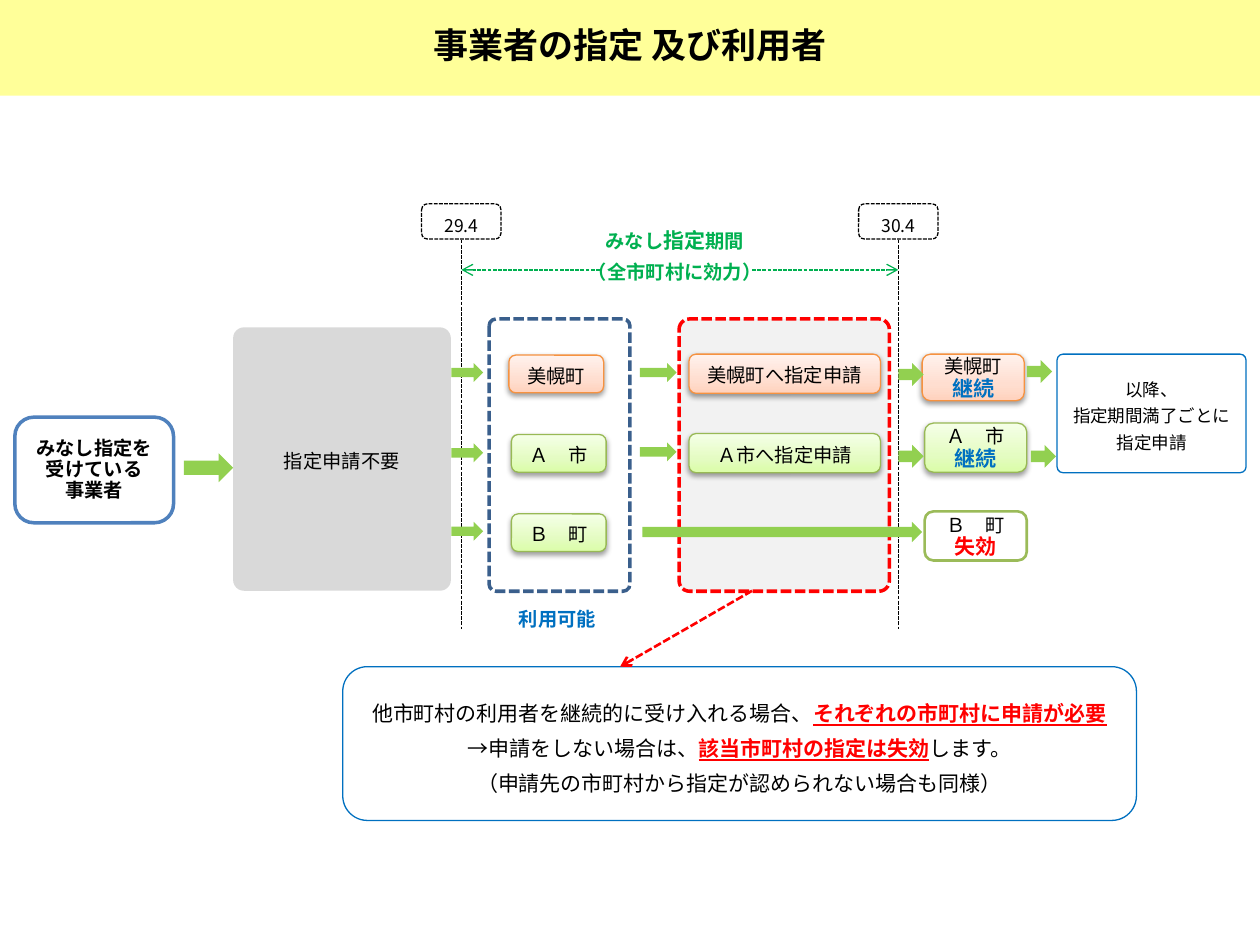
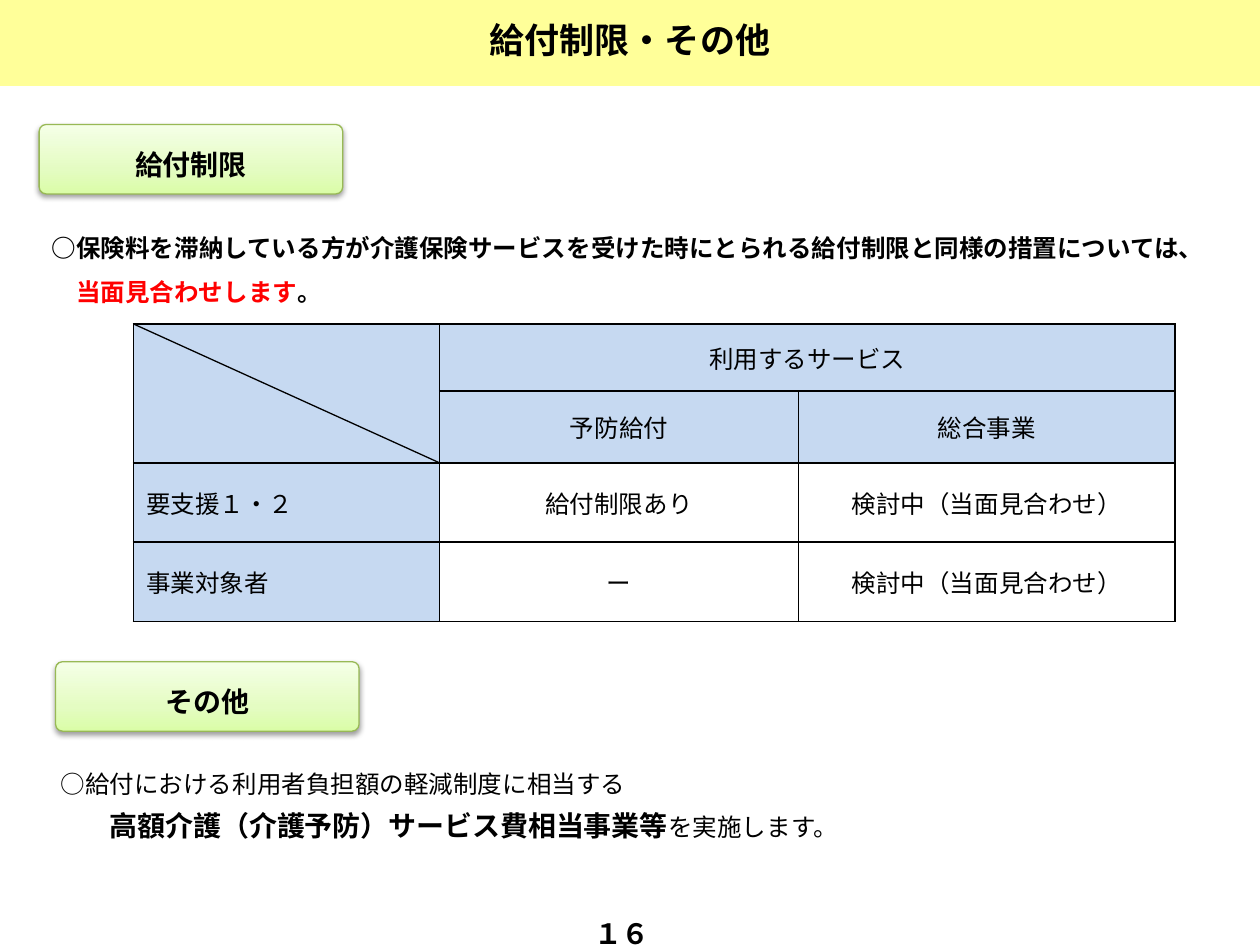
"""Build two slides on provider designation and on benefit restrictions."""
from dataclasses import dataclass
from itertools import accumulate

from lxml.etree import SubElement
from pptx import Presentation
from pptx.dml.color import RGBColor
from pptx.enum.dml import MSO_LINE
from pptx.enum.shapes import MSO_CONNECTOR, MSO_SHAPE
from pptx.enum.text import MSO_ANCHOR, MSO_AUTO_SIZE, PP_ALIGN
from pptx.oxml import parse_xml
from pptx.oxml.ns import nsdecls, qn
from pptx.util import Cm, Pt


@dataclass(frozen=True)
class Theme:
    font: str = "Noto Sans CJK JP"
    number_font: str = "Calibri"
    black: str = "000000"
    white: str = "FFFFFF"
    band: str = "FFFF99"
    red: str = "FF0000"
    blue: str = "0070C0"
    navy: str = "3A5F8C"
    provider: str = "4F81BD"
    green: str = "00B050"
    arrow: str = "92D050"
    olive: str = "9BBB59"
    pale_grey: str = "F2F2F2"
    grey: str = "D9D9D9"
    header: str = "C6D9F1"
    peach_line: str = "F69240"
    lime_line: str = "98B955"
    peach: tuple = ("FFD2BD", "FFDED0", "FFF2ED")
    lime: tuple = ("DAFDA7", "E4FCC2", "F5FFE7")
    title: int = 20
    heading: int = 16
    body: int = 14
    note: int = 12
    label: int = 11
    small: int = 10


theme = Theme()


def write(frame, paragraphs, spacing=None, align=PP_ALIGN.CENTER, **base):
    """Fill a frame; a paragraph is a string or a list of (text, changes)."""
    frame.word_wrap = True
    frame.vertical_anchor = MSO_ANCHOR.MIDDLE
    for index, spans in enumerate(paragraphs):
        paragraph = frame.add_paragraph() if index else frame.paragraphs[0]
        layout = {
            "alignment": align,
            "line_spacing": Pt(spacing) if spacing else None,
            "space_before": Pt(0),
        }
        for name, value in layout.items():
            setattr(paragraph, name, value)
        for text, changes in [(spans, {})] if isinstance(spans, str) else spans:
            span = paragraph.add_run()
            span.text = text
            look = {"name": theme.font, "size": theme.label, "bold": False,
                    "color": theme.black, **base, **changes}
            color = look.pop("color")
            look["size"] = Pt(look["size"])
            for name, value in look.items():
                setattr(span.font, name, value)
            span.font.color.rgb = RGBColor.from_string(color)
            SubElement(span.font._element, qn("a:ea"), typeface=look["name"])


def add_box(page, place, fill=None, line=None, width=0.75, dash=False,
            corner=0.0, kind=None):
    """Add a shape; a fill of several colours makes a shadowed gradient."""
    kind = kind or (MSO_SHAPE.ROUNDED_RECTANGLE if corner else MSO_SHAPE.RECTANGLE)
    box = page.shapes.add_shape(kind, *map(Cm, place))
    box.shadow.inherit = False
    properties = box._element.spPr
    if corner:
        box.adjustments[0] = corner
    if isinstance(fill, tuple):
        stops = "".join(
            f'<a:gs pos="{position}"><a:srgbClr val="{color}"/></a:gs>'
            for position, color in zip((0, 35000, 100000), fill))
        properties.insert(2, parse_xml(
            f'<a:gradFill {nsdecls("a")} rotWithShape="1"><a:gsLst>{stops}</a:gsLst>'
            '<a:lin ang="16200000" scaled="0"/></a:gradFill>'))
        properties.find(qn("a:effectLst")).append(parse_xml(
            f'<a:outerShdw {nsdecls("a")} blurRad="40000" dist="20000" dir="5400000"'
            ' rotWithShape="0"><a:srgbClr val="000000"><a:alpha val="38000"/>'
            '</a:srgbClr></a:outerShdw>'))
    elif fill:
        box.fill.solid()
        box.fill.fore_color.rgb = RGBColor.from_string(fill)
    else:
        box.fill.background()
    if line:
        box.line.color.rgb = RGBColor.from_string(line)
        box.line.width = Pt(width)
        if dash:
            box.line.dash_style = MSO_LINE.SQUARE_DOT
    else:
        box.line.fill.background()
    return box


deck = Presentation()
deck.slide_width, deck.slide_height = Cm(25.4), Cm(19.05)

pages = []
for layout, title, band_height in (
    (5, "事業者の指定 及び利用者", 1.93),
    (3, "給付制限・その他", 1.73),
):
    page = deck.slides.add_slide(deck.slide_layouts[layout])
    band = page.shapes.title
    band.left, band.top, band.width, band.height = 0, 0, deck.slide_width, Cm(band_height)
    band.fill.solid()
    band.fill.fore_color.rgb = RGBColor.from_string(theme.band)
    band.text_frame.auto_size = MSO_AUTO_SIZE.NONE
    write(band.text_frame, [title], 20, size=theme.title, bold=True)
    pages.append(page)
flow, limits = pages

peach = {"fill": theme.peach, "line": theme.peach_line, "corner": 0.18}
lime = {"fill": theme.lime, "line": theme.lime_line, "corner": 0.18}
expired = {"fill": theme.white, "line": theme.olive, "width": 1.5, "corner": 0.18}
dashed = {"width": 2, "dash": True, "corner": 0.05}
start_x, end_x = 9.3, 18.11
frame_top, frame_height = 6.43, 5.49

add_box(flow, (13.69, frame_top, 4.24, frame_height), theme.pale_grey, theme.red, **dashed)
add_box(flow, (9.86, frame_top, 2.84, frame_height), None, theme.navy, **dashed)

for date, x in (("29.4", start_x), ("30.4", end_x)):
    box = add_box(flow, (x - 0.8, 4.11, 1.6, 0.71), theme.white, theme.black,
                  dash=True, corner=0.17)
    write(box.text_frame, [date], 17, size=theme.small)

period = add_box(flow, (11.51, 4.47, 4.19, 1.27), theme.white)
write(period.text_frame,
      [[("みなし", {}), ("指定", {"size": theme.note}), ("期間", {})], "（全市町村に効力）"],
      17, color=theme.green, bold=True)

stress = {"color": theme.red, "bold": True, "underline": True}
callout = add_box(flow, (6.91, 13.44, 16, 3.1), theme.white, theme.blue, corner=0.16)
write(callout.text_frame, [
    [("他市町村の利用者を継続的に受け入れる場合、", {}),
     ("それぞれの市町村に申請が必要", stress)],
    [("→申請をしない場合は、", {}), ("該当市町村の指定は失効", stress), ("します。", {})],
    "（申請先の市町村から指定が認められない場合も同様）",
], 20, size=theme.note)

column_widths, row_heights = (6.17, 7.24, 7.59), (1.35, 1.45, 1.6, 1.6)
table_left, table_top = 2.69, 6.53
rows = (
    ("", "利用するサービス", ""),
    ("", "予防給付", "総合事業"),
    ("要支援１・２", "給付制限あり", "検討中（当面見合わせ）"),
    ("事業対象者", "ー", "検討中（当面見合わせ）"),
)
table = limits.shapes.add_table(
    len(rows), len(column_widths), Cm(table_left), Cm(table_top),
    Cm(sum(column_widths)), Cm(sum(row_heights))).table
table.first_row = table.horz_banding = False
for column, width in zip(table.columns, column_widths):
    column.width = Cm(width)
for row, height in zip(table.rows, row_heights):
    row.height = Cm(height)
for row_index, texts in enumerate(rows):
    for column_index, text in enumerate(texts):
        cell = table.cell(row_index, column_index)
        cell.vertical_anchor = MSO_ANCHOR.MIDDLE
        for side in ("lnL", "lnR", "lnT", "lnB"):
            cell._tc.get_or_add_tcPr().append(parse_xml(
                f'<a:{side} {nsdecls("a")} w="12700"><a:solidFill>'
                f'<a:srgbClr val="{theme.black}"/></a:solidFill></a:{side}>'))
        cell.fill.solid()
        is_header = row_index < 2 or column_index == 0
        cell.fill.fore_color.rgb = RGBColor.from_string(
            theme.header if is_header else theme.white)
        if text:
            write(cell.text_frame, [text], size=theme.body,
                  align=PP_ALIGN.CENTER if column_index else PP_ALIGN.LEFT)
table.cell(0, 0).merge(table.cell(1, 0))
table.cell(0, 1).merge(table.cell(0, 2))

corner_end = (table_left + column_widths[0], table_top + sum(row_heights[:2]))
for page, start, end, color, width, dash, arrow in (
    (flow, (start_x, 4.83), (start_x, 12.67), theme.black, 0.75, True, False),
    (flow, (end_x, 4.83), (end_x, 12.67), theme.black, 0.75, True, False),
    (flow, (12.09, 5.44), (start_x, 5.44), theme.green, 0.75, True, True),
    (flow, (15.16, 5.44), (end_x, 5.44), theme.green, 0.75, True, True),
    (flow, (15.16, 11.91), (12.5, 13.44), theme.red, 1.5, True, True),
    (limits, (table_left, table_top), corner_end, theme.black, 0.75, False, False),
):
    line = page.shapes.add_connector(MSO_CONNECTOR.STRAIGHT, *map(Cm, start + end))
    line.line.color.rgb = RGBColor.from_string(color)
    line.line.width = Pt(width)
    if dash:
        line.line.dash_style = MSO_LINE.SQUARE_DOT
    if arrow:
        SubElement(line.line._get_or_add_ln(), qn("a:tailEnd"), type="arrow")
    SubElement(line._element.spPr, qn("a:effectLst"))

provider = add_box(flow, (0.3, 8.41, 3.2, 2.13), theme.white, theme.provider, 2, corner=0.18)
write(provider.text_frame, ["みなし指定を", "受けている", "事業者"], 12, bold=True)
exempt = add_box(flow, (4.7, 6.6, 4.39, 5.31), theme.grey, corner=0.05)
write(exempt.text_frame, ["指定申請不要"], 15)
usable = add_box(flow, (10.21, 12.09, 2.31, 0.64), theme.white)
write(usable.text_frame, ["利用可能"], 17, PP_ALIGN.LEFT, color=theme.blue, bold=True)
renewal = add_box(flow, (21.31, 7.14, 3.81, 2.39), theme.white, theme.blue, corner=0.05)
write(renewal.text_frame, ["以降、", "指定期間満了ごとに指定申請"], 15, size=theme.small)

towns = (("美幌町", 10.26, peach), ("Ａ　市", 10.31, lime), ("Ｂ　町", 10.31, lime))
for index, (town, x, look) in enumerate(towns):
    box = add_box(flow, (x, 7.16 + 1.6 * index, 1.91, 0.76), **look)
    write(box.text_frame, [town], 15)
for index, (request, look) in enumerate((("美幌町へ指定申請", peach), ("Ａ市へ指定申請", lime))):
    box = add_box(flow, (13.89, 7.14 + 1.6 * index, 3.86, 0.79), **look)
    write(box.text_frame, [request], 15)
for (town, *_), result, color, place, look in zip(
    towns, ("継続", "継続", "失効"), (theme.blue, theme.blue, theme.red),
    ((18.59, 7.14, 2.06, 0.94), (18.64, 8.53, 2.06, 0.99), (18.64, 10.31, 2.06, 0.99)),
    (peach, lime, expired),
):
    box = add_box(flow, place, **look)
    write(box.text_frame,
          [town, [(result, {"size": theme.note, "color": color, "bold": True})]], 13)

for place in (
    (3.71, 9.14, 0.99, 0.58),
    *((9.1, y, 0.64, 0.38) for y in (7.32, 8.94, 10.52)),
    *((12.9, y, 0.74, 0.38) for y in (7.32, 8.92)),
    (12.95, 10.52, 5.64, 0.41),
    *((end_x, y, 0.51, 0.46) for y in (7.32, 8.97)),
    (20.7, 7.26, 0.51, 0.46),
    (20.78, 8.97, 0.51, 0.46),
):
    add_box(flow, place, theme.arrow, kind=MSO_SHAPE.RIGHT_ARROW)

for heading, x, y in (("給付制限", 0.79, 2.51), ("その他", 1.12, 13.34)):
    box = add_box(limits, (x, y, 6.12, 1.4), **{**lime, "corner": 0.1})
    write(box.text_frame, [heading], 25, size=theme.heading, bold=True)

strong = {"size": theme.heading, "bold": True}
for index, place, bold, indent, paragraphs in (
    (1, (0.79, 4.29, 24.31, 2.01), True, 14, [
        "○保険料を滞納している方が介護保険サービスを受けた時にとられる給付制限と同様の措置については、",
        [("当面見合わせします", {"color": theme.red}), ("。", {})]]),
    (2, (0.97, 15.11, 23.57, 1.98), False, 28, [
        "○給付における利用者負担額の軽減制度に相当する",
        [("高額介護（介護予防）サービス費相当事業等", strong), ("を実施します。", {})]]),
):
    body = limits.placeholders[index]
    body.left, body.top, body.width, body.height = map(Cm, place)
    body.text_frame.auto_size = MSO_AUTO_SIZE.NONE
    write(body.text_frame, paragraphs, 25, PP_ALIGN.LEFT, size=theme.body, bold=bold)
    for paragraph, margin in zip(body.text_frame.paragraphs, (0, indent)):
        properties = paragraph._p.get_or_add_pPr()
        properties.set("marL", str(Pt(margin)))
        properties.set("indent", "0")
        SubElement(properties, qn("a:buNone"))

number = limits.shapes.add_textbox(*map(Cm, (9.58, 18.31, 5.92, 1.02)))
write(number.text_frame, ["１６"], name=theme.number_font, size=theme.heading, bold=True)

deck.save("out.pptx")
